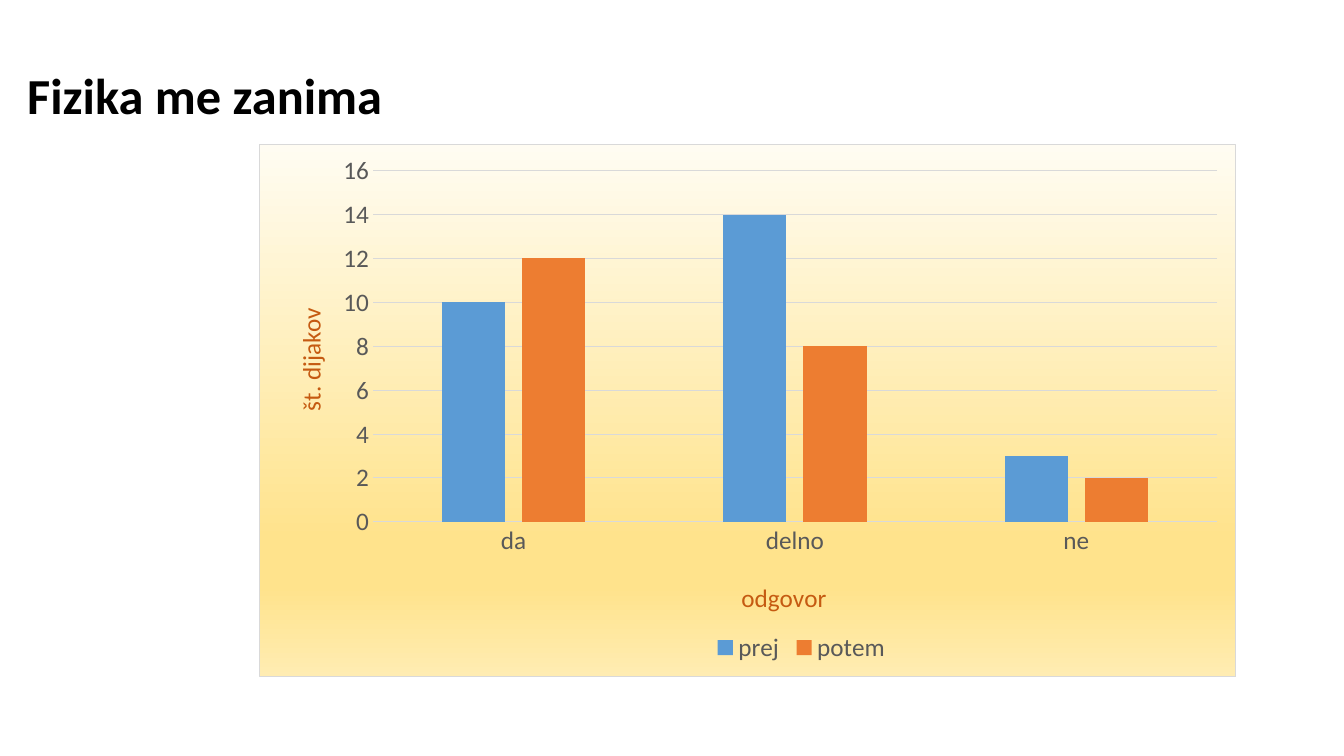
from lxml import etree
from pptx import Presentation
from pptx.chart.data import CategoryChartData
from pptx.dml.color import RGBColor
from pptx.enum.chart import XL_CHART_TYPE, XL_LEGEND_POSITION, XL_TICK_MARK
from pptx.enum.text import MSO_ANCHOR, PP_ALIGN
from pptx.oxml import parse_xml
from pptx.oxml.ns import qn
from pptx.util import Inches, Pt

COLUMNS = XL_CHART_TYPE.COLUMN_CLUSTERED
BOTTOM = XL_LEGEND_POSITION.BOTTOM
NO_TICKS = XL_TICK_MARK.NONE
ANCHOR_BOTTOM = MSO_ANCHOR.BOTTOM
LEFT = PP_ALIGN.LEFT

TITLE = "Fizika me zanima"
ANSWERS = ["da", "delno", "ne"]
SERIES = [("prej", [10, 14, 3], "5B9BD5"), ("potem", [12, 8, 2], "ED7D31")]
ANSWER_TITLE, COUNT_TITLE = "odgovor", "št. dijakov"
BACKGROUND_STOPS = [(0, "FFFCF2"), (74, "FFE38C"), (83, "FFE38C"), (100, "FFECB2")]

FONT = "Calibri"
LABEL_GREY, LINE_GREY, AXIS_TITLE_BROWN = "595959", "D9D9D9", "C55A11"
LINE_WIDTH = 0.75
LABEL_SIZE = 18
TITLE_BOX = (0.17, 0.17, 12.99, 1.12)
CHART_BOX = (2.57, 1.43, 9.69, 5.29)

# Shares of the chart's width and height: left, top and, where set, width, height
PLOT_AREA = (0.116, 0.049, 0.865, 0.66)
ANSWER_TITLE_PLACE = (0.489, 0.81)
COUNT_TITLE_PLACE = (0.03, 0.298)
LEGEND_PLACE = (0.46, 0.91, 0.19, 0.07)


def rgb(color):
    return RGBColor.from_string(color)


def style_font(font, size, color, bold=False):
    font.name, font.size, font.bold = FONT, Pt(size), bold
    font.color.rgb = rgb(color)


def style_line(line, color):
    line.width = Pt(LINE_WIDTH)
    line.color.rgb = rgb(color)


def place_part(part, index, shares, inner=False):
    """Give a chart part a fixed place, as shares of the chart."""
    for old_layout in part.findall(qn("c:layout")):
        part.remove(old_layout)
    layout = etree.Element(qn("c:layout"))
    manual = etree.SubElement(layout, qn("c:manualLayout"))
    settings = [("layoutTarget", "inner")] if inner else []
    settings += [("xMode", "edge"), ("yMode", "edge")]
    settings += zip("xywh", shares)
    for name, value in settings:
        etree.SubElement(manual, qn(f"c:{name}")).set("val", str(value))
    part.insert(index, layout)


def style_axis(axis, title):
    axis.major_tick_mark = axis.minor_tick_mark = NO_TICKS
    style_font(axis.tick_labels.font, LABEL_SIZE, LABEL_GREY)
    text_frame = axis.axis_title.text_frame
    text_frame.text = title
    style_font(text_frame.paragraphs[0].runs[0].font, LABEL_SIZE, AXIS_TITLE_BROWN)


def fill_chart_background(chart_space):
    stops = "".join(
        f'<a:gs pos="{percent * 1000}"><a:srgbClr val="{color}"/></a:gs>'
        for percent, color in BACKGROUND_STOPS
    )
    properties = parse_xml(
        '<c:spPr xmlns:c="http://schemas.openxmlformats.org/drawingml/2006/chart" '
        'xmlns:a="http://schemas.openxmlformats.org/drawingml/2006/main">'
        f'<a:gradFill><a:gsLst>{stops}</a:gsLst><a:lin ang="5400000" scaled="0"/></a:gradFill>'
        f'<a:ln w="{Pt(LINE_WIDTH)}"><a:solidFill><a:srgbClr val="{LINE_GREY}"/></a:solidFill></a:ln>'
        "</c:spPr>"
    )
    chart_space.find(qn("c:chart")).addnext(properties)


def add_title(slide):
    title = slide.shapes.title
    title.left, title.top, title.width, title.height = map(Inches, TITLE_BOX)
    text_frame = title.text_frame
    text_frame.text = TITLE
    text_frame.vertical_anchor = ANCHOR_BOTTOM
    paragraph = text_frame.paragraphs[0]
    paragraph.alignment = LEFT
    paragraph.line_spacing = 0.9
    style_font(paragraph.runs[0].font, 36, "000000", bold=True)


def add_answer_chart(slide):
    data = CategoryChartData()
    data.categories = ANSWERS
    for name, values, _ in SERIES:
        data.add_series(name, values)
    chart = slide.shapes.add_chart(COLUMNS, *map(Inches, CHART_BOX), data).chart
    chart.has_title = False
    style_font(chart.font, 10, "000000")

    plot = chart.plots[0]
    plot.gap_width, plot.overlap = 219, -27
    plot.vary_by_categories = False
    for series, (_, _, color) in zip(plot.series, SERIES):
        series.format.fill.solid()
        series.format.fill.fore_color.rgb = rgb(color)

    answer_axis, count_axis = chart.category_axis, chart.value_axis
    style_axis(answer_axis, ANSWER_TITLE)
    style_line(answer_axis.format.line, LINE_GREY)
    style_axis(count_axis, COUNT_TITLE)
    count_axis.minimum_scale, count_axis.maximum_scale = 0, 16
    count_axis.major_unit = 2
    count_axis.format.line.fill.background()
    style_line(count_axis.major_gridlines.format.line, LINE_GREY)

    chart.has_legend = True
    chart.legend.position = BOTTOM
    chart.legend.include_in_layout = False
    style_font(chart.legend.font, LABEL_SIZE, LABEL_GREY)

    chart_space = chart.element
    fill_chart_background(chart_space)
    answer_title, count_title = chart_space.xpath(".//c:catAx/c:title | .//c:valAx/c:title")
    body = count_title.find(".//" + qn("a:bodyPr"))
    body.set("rot", "-5400000")
    body.set("vert", "horz")
    place_part(answer_title, 1, ANSWER_TITLE_PLACE)
    place_part(count_title, 1, COUNT_TITLE_PLACE)
    place_part(chart_space.find(".//" + qn("c:legend")), 1, LEGEND_PLACE)
    place_part(chart_space.find(".//" + qn("c:plotArea")), 0, PLOT_AREA, inner=True)


def main():
    presentation = Presentation()
    presentation.slide_width, presentation.slide_height = Inches(13.33), Inches(7.5)
    slide = presentation.slides.add_slide(presentation.slide_layouts[5])
    add_title(slide)
    add_answer_chart(slide)
    presentation.save("out.pptx")


if __name__ == "__main__":
    main()
